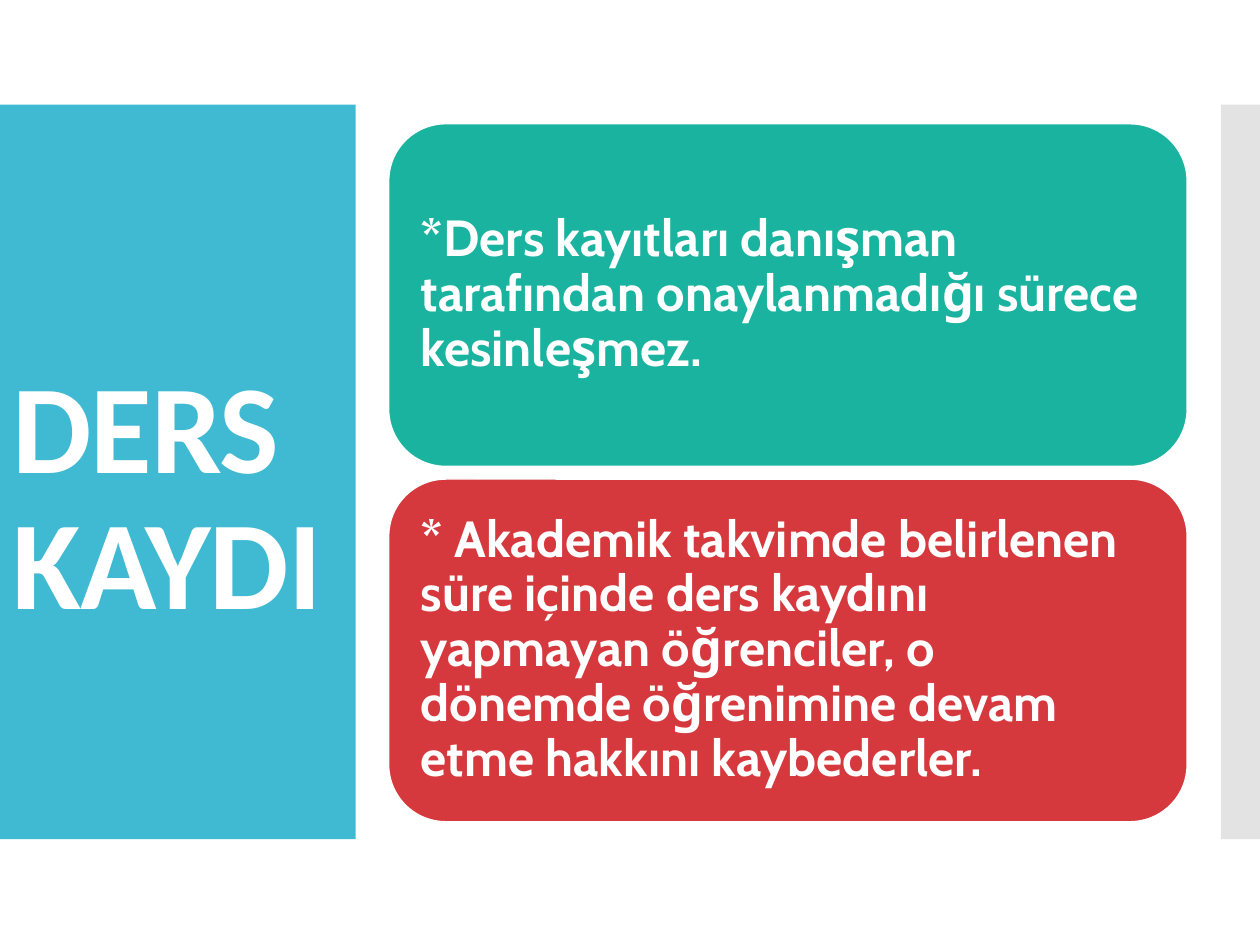
from lxml import etree
from pptx import Presentation
from pptx.dml.color import RGBColor
from pptx.enum import shapes, text
from pptx.oxml.ns import qn
from pptx.util import Pt

WHITE = RGBColor(0xFF, 0xFF, 0xFF)
CYAN = RGBColor(0x40, 0xBA, 0xD2)
GRAY = RGBColor(0xC8, 0xC8, 0xC8)
GREEN = RGBColor(0x1A, 0xB3, 0x9F)
RED = RGBColor(0xD5, 0x39, 0x3D)

BAND_TOP, BAND_HEIGHT = 59.76, 419.76
CARD_HEIGHT, CARD_STEP = 195.84, 203.04
CARDS = [
    ("*Ders kayıtları danışman tarafından onaylanmadığı sürece kesinleşmez.", GREEN),
    ("* Akademik takvimde belirlenen süre içinde ders kaydını yapmayan "
     "öğrenciler, o dönemde öğrenimine devam etme hakkını kaybederler.", RED),
]


def add_block(s, kind, x, y, w, h, color):
    sp = s.shapes.add_shape(kind, Pt(x), Pt(y), Pt(w), Pt(h))
    sp.shadow.inherit = False
    sp.fill.solid()
    sp.fill.fore_color.rgb = color
    sp.line.fill.background()
    return sp


def add_text(s, x, y, w, h, content, font, size, margins):
    """Add white bold text, centred vertically; margins are left, top, right, bottom."""
    tf = s.shapes.add_textbox(Pt(x), Pt(y), Pt(w), Pt(h)).text_frame
    tf.word_wrap = True
    tf.vertical_anchor = text.MSO_ANCHOR.MIDDLE
    tf.margin_left, tf.margin_top, tf.margin_right, tf.margin_bottom = map(Pt, margins)
    tf.text = content
    p = tf.paragraphs[0]
    p.line_spacing = 0.9
    r = p.runs[0]
    r.font.name, r.font.size, r.font.bold = font, Pt(size), True
    r.font.color.rgb = WHITE
    return r


def add_title_panel(s, x, y, w, h):
    add_block(s, shapes.MSO_SHAPE.RECTANGLE, x, y, w, h, CYAN)
    # The deep top margin sets the title below the middle of the panel.
    r = add_text(s, x, y + 28.8, w - 1.4, h - 57.6, "DERS KAYDI", "Calibri", 72,
                 (7.2, 36.6, 7.2, 3.6))
    r.font._element.set("spc", "-60")


def add_edge_strip(s, x, y, w, h):
    sp = add_block(s, shapes.MSO_SHAPE.RECTANGLE, x, y, w, h, GRAY)
    color = sp._element.spPr.find(qn("a:solidFill"))[0]
    etree.SubElement(color, qn("a:alpha"), val="50000")


def add_card(s, x, y, w, h, content, color):
    sp = add_block(s, shapes.MSO_SHAPE.ROUNDED_RECTANGLE, x, y, w, h, color)
    sp.line.color.rgb = WHITE
    sp.line.width = Pt(0.85)
    inset = 9.56
    add_text(s, x + inset, y + inset, w - 2 * inset, h - 2 * inset,
             content, "Cabin", 29, (8.7,) * 4)


def main():
    prs = Presentation()
    prs.slide_width, prs.slide_height = Pt(720), Pt(540)
    s = prs.slides.add_slide(prs.slide_layouts[6])
    add_title_panel(s, 0, BAND_TOP, 203.3, BAND_HEIGHT)
    add_edge_strip(s, 697.6, BAND_TOP, 22.4, BAND_HEIGHT)
    for i, (content, color) in enumerate(CARDS):
        add_card(s, 222.1, 70.7 + i * CARD_STEP, 456.3, CARD_HEIGHT, content, color)
    prs.save("out.pptx")


if __name__ == "__main__":
    main()
